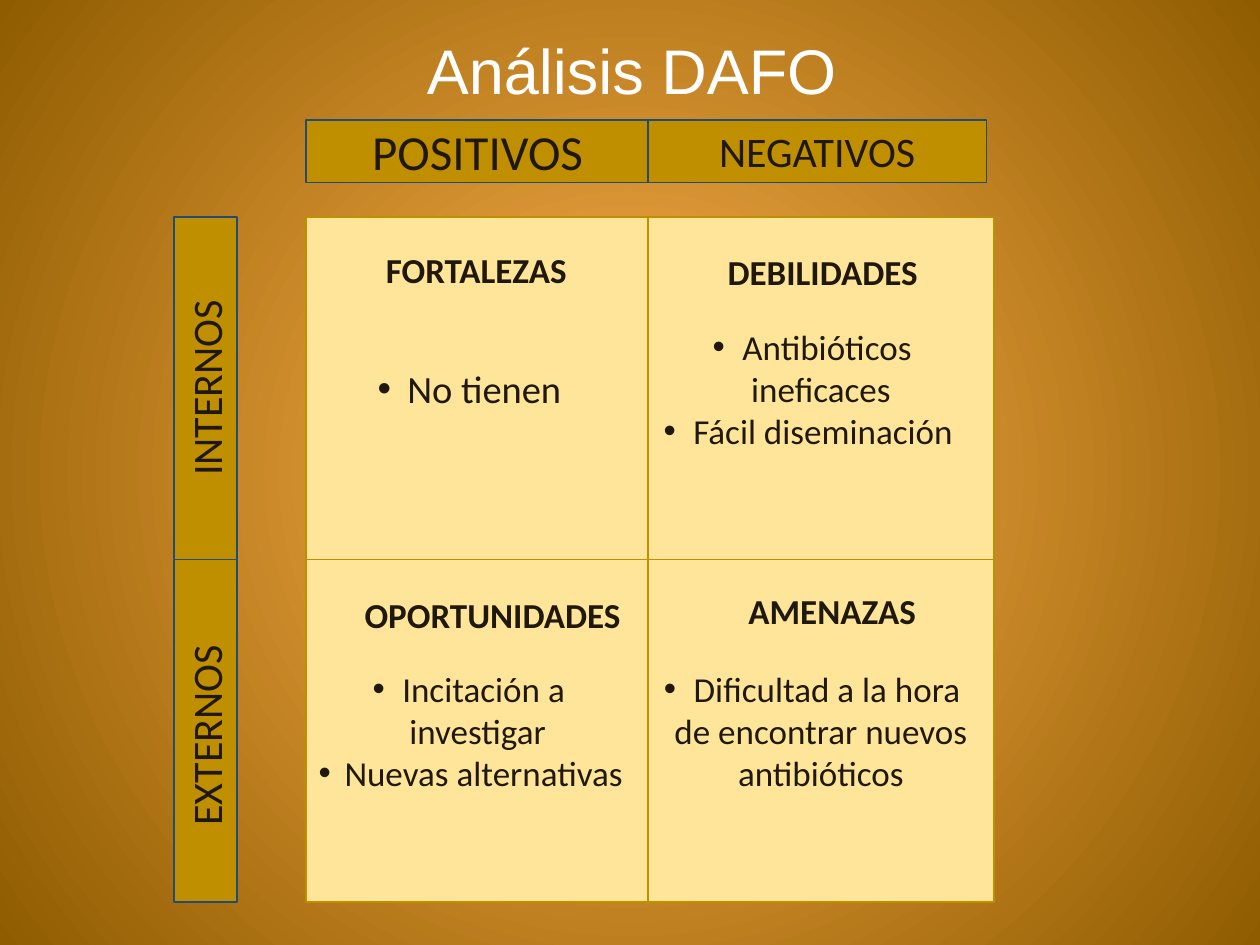
from lxml import etree
from pptx import Presentation
from pptx.dml.color import RGBColor
from pptx.enum.shapes import MSO_SHAPE
from pptx.enum.text import MSO_ANCHOR, PP_ALIGN
from pptx.oxml import parse_xml
from pptx.oxml.ns import nsdecls, qn
from pptx.util import Inches, Pt

COLORS = {
    "glow": "FFB14E", "edge": "8F5C00", "cell": "FFE599", "cell_line": "BF8F00",
    "band": "BF8F00", "band_line": "1F4D78", "text": "20190B", "title": "FFFFFF",
}
TITLE = "Análisis DAFO"
COLUMNS = [  # label, left, cell width, label width, label size
    ("POSITIVOS", 2.43, 2.72, 2.72, 28),
    ("NEGATIVOS", 5.14, 2.75, 2.69, 24),
]
ROWS = [("INTERNOS", 1.72), ("EXTERNOS ", 4.44)]  # label, top
CELL_HEIGHT = 2.72
BAND = 0.5
COLUMN_LABEL_TOP = 0.95
ROW_LABEL_CENTER = 1.63
QUADRANTS = [  # row, column, size, bullets, heading, heading box
    (0, 0, 22, ["No tienen"], "FORTALEZAS", (2.53, 1.92, 2.5, 0.34)),
    (0, 1, 20, ["Antibióticos ineficaces", "Fácil diseminación "],
     "DEBILIDADES", (5.48, 1.94, 2.1, 0.33)),
    (1, 0, 20, ["Incitación a investigar", "Nuevas alternativas"],
     "OPORTUNIDADES", (2.75, 4.66, 2.32, 0.41)),
    (1, 1, 20, ["Dificultad a la hora de encontrar nuevos antibióticos"],
     "AMENAZAS", (5.46, 4.63, 2.29, 0.36)),
]


def color(name):
    return RGBColor.from_string(COLORS[name])


def write(shape, lines, size, align=PP_ALIGN.CENTER, font="Calibri",
          ink="text", bold=False):
    frame = shape.text_frame
    frame.word_wrap = True
    frame.text = "\n".join(lines)
    for paragraph in frame.paragraphs:
        paragraph.alignment = align
        for run in paragraph.runs:
            run.font.size = Pt(size)
            run.font.name = font
            run.font.bold = bold
            run.font.color.rgb = color(ink)


def add_box(slide, box, style, lines, size):
    shape = slide.shapes.add_shape(MSO_SHAPE.RECTANGLE, *map(Inches, box))
    shape.shadow.inherit = False
    shape.fill.solid()
    shape.fill.fore_color.rgb = color(style)
    shape.line.color.rgb = color(style + "_line")
    shape.line.width = Pt(1)
    shape.text_frame.vertical_anchor = MSO_ANCHOR.MIDDLE
    write(shape, lines, size)
    return shape


def add_bullets(shape):
    for paragraph in shape.text_frame.paragraphs:
        properties = paragraph._p.get_or_add_pPr()
        etree.SubElement(properties, qn("a:buFont")).set("typeface", "Arial")
        etree.SubElement(properties, qn("a:buChar")).set("char", "•")


def add_text(slide, box, text, size, **style):
    write(slide.shapes.add_textbox(*map(Inches, box)), [text], size, **style)


def paint_background(slide):
    """Radial gradient from the centre to the edges."""
    fill = slide.background.fill
    fill.gradient()
    for stop, name in zip(fill.gradient_stops, ("glow", "edge")):
        stop.color.rgb = color(name)
    fill.gradient_stops[0].position = 0
    fill.gradient_stops[1].position = 1
    linear = next(slide._element.iter(qn("a:lin")))
    linear.getparent().replace(linear, parse_xml(
        f'<a:path {nsdecls("a")} path="circle">'
        '<a:fillToRect l="50000" t="50000" r="50000" b="50000"/></a:path>'))


def main():
    presentation = Presentation()
    presentation.slide_width = Inches(10)
    presentation.slide_height = Inches(7.5)
    slide = presentation.slides.add_slide(presentation.slide_layouts[6])
    paint_background(slide)

    for row, column, size, bullets, _, _ in QUADRANTS:
        _, left, width, _, _ = COLUMNS[column]
        cell = (left, ROWS[row][1], width, CELL_HEIGHT)
        add_bullets(add_box(slide, cell, "cell", bullets, size))

    for label, left, _, width, size in COLUMNS:
        add_box(slide, (left, COLUMN_LABEL_TOP, width, BAND), "band", [label], size)

    for label, top in ROWS:
        box = (ROW_LABEL_CENTER - CELL_HEIGHT / 2, top + (CELL_HEIGHT - BAND) / 2,
               CELL_HEIGHT, BAND)
        add_box(slide, box, "band", [label], 24).rotation = 270

    for _, _, _, _, heading, box in QUADRANTS:
        add_text(slide, box, heading, 20, bold=True)
    add_text(slide, (3.29, 0.2, 3.7, 0.71), TITLE, 36,
             align=PP_ALIGN.LEFT, font="Arial", ink="title")

    presentation.save("out.pptx")


if __name__ == "__main__":
    main()
